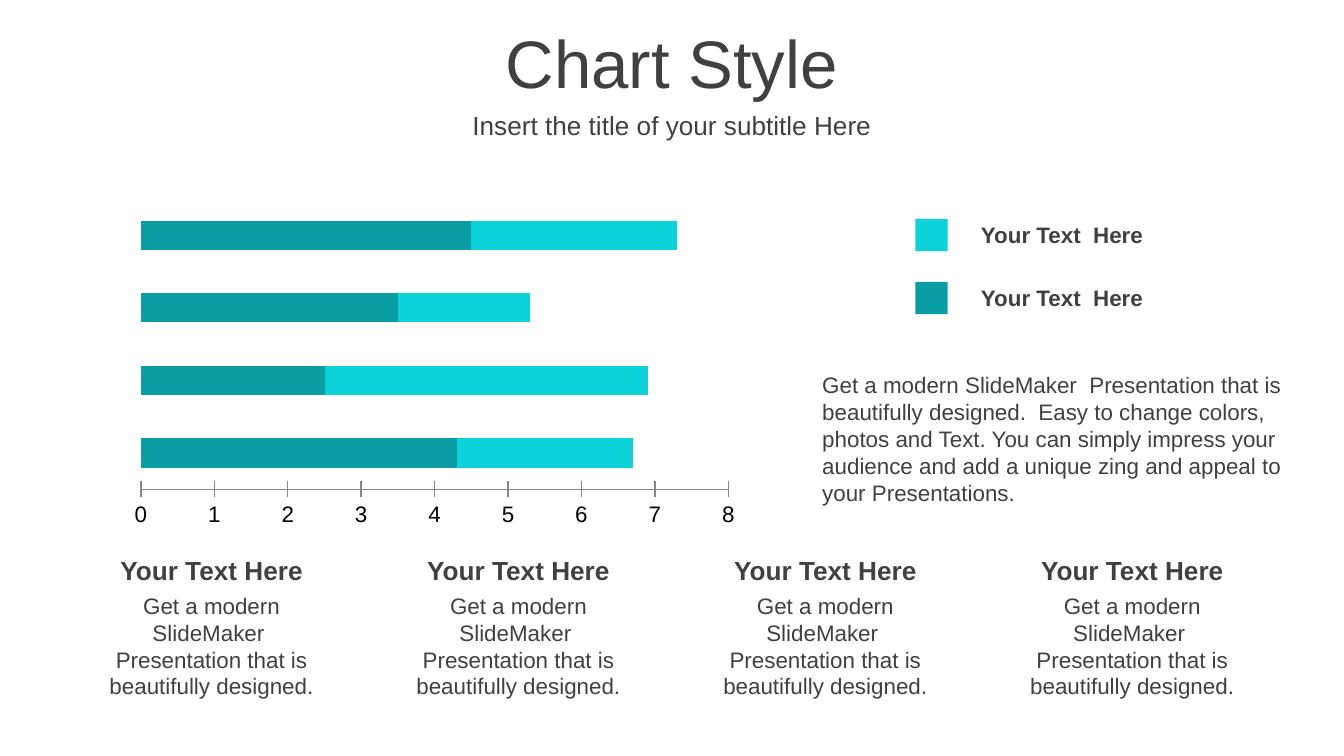
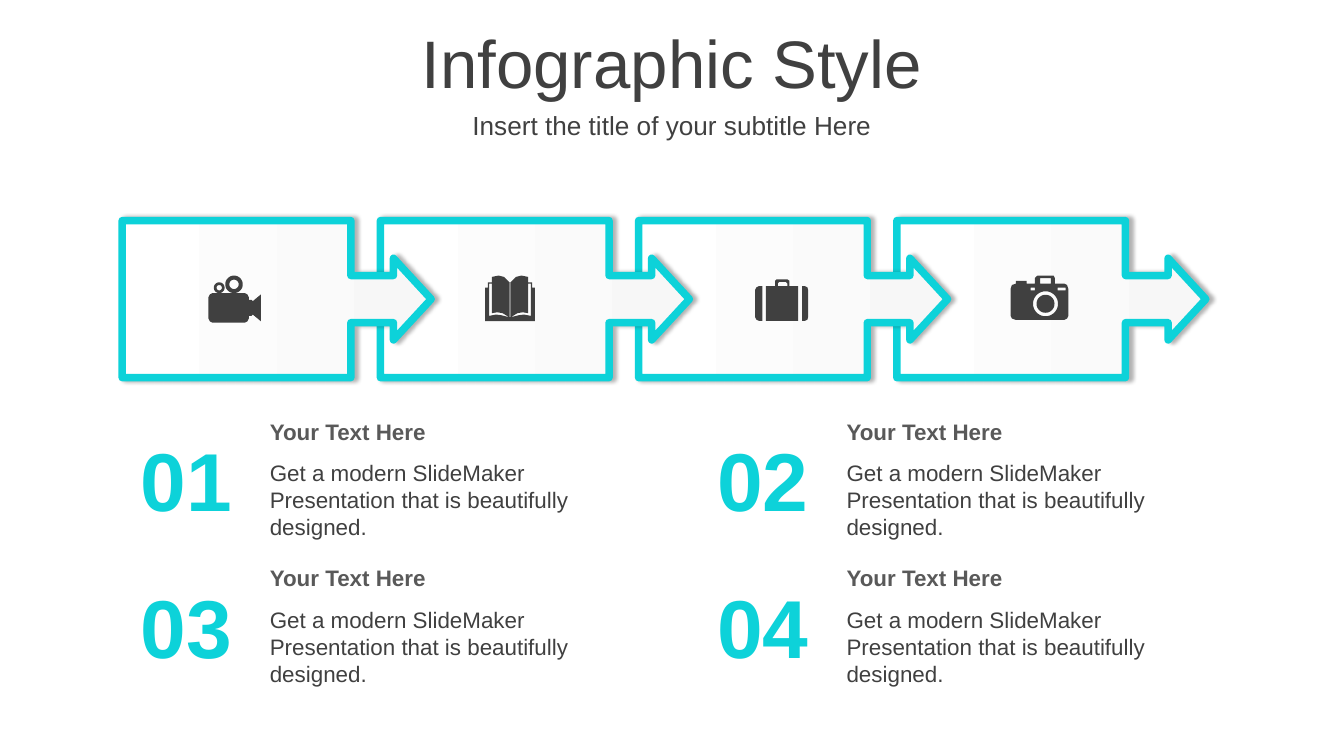
from math import cos, pi, sin

from lxml import etree
from pptx import Presentation
from pptx.chart.data import CategoryChartData
from pptx.dml.color import RGBColor
from pptx.enum.chart import XL_CHART_TYPE, XL_TICK_MARK
from pptx.enum.shapes import MSO_SHAPE
from pptx.enum.text import MSO_ANCHOR, MSO_AUTO_SIZE, PP_ALIGN
from pptx.oxml.ns import qn
from pptx.util import Cm, Pt

LEFT, CENTER = PP_ALIGN.LEFT, PP_ALIGN.CENTER
TOP, MIDDLE = MSO_ANCHOR.TOP, MSO_ANCHOR.MIDDLE
FIT_TEXT = MSO_AUTO_SIZE.SHAPE_TO_FIT_TEXT
RECTANGLE, CALLOUT = MSO_SHAPE.RECTANGLE, MSO_SHAPE.RIGHT_ARROW_CALLOUT
STACKED_BAR = XL_CHART_TYPE.BAR_STACKED
CROSS = XL_TICK_MARK.CROSS

FONT = "Arial"
COLORS = {
    "text": "404040",
    "heading": "595959",
    "bright": "0DD2D9",
    "dark": "0A9DA3",
    "axis": "868686",
    "black": "000000",
    "white": "FFFFFF",
    "pale": "F7F7F7",
}
RGB = {name: RGBColor.from_string(value) for name, value in COLORS.items()}

HEADING = "Your Text Here"
LEGEND_LABEL = "Your Text  Here"
SHORT_TEXT = "Get a modern SlideMaker  Presentation that is beautifully designed."
LONG_TEXT = (
    "Get a modern SlideMaker  Presentation that is beautifully designed.  "
    "Easy to change colors, photos and Text. You can simply impress your "
    "audience and add a unique zing and appeal to your Presentations."
)

# Icon contours in hundredths of an inch; a circle is (center x, center y, radius)
MOVIE_CAMERA = [
    [(3, 13), (27, 13), (29, 14), (30, 16), (30, 18), (32, 18), (33, 19),
     (39, 14), (39, 34), (33, 29), (32, 30), (30, 30), (30, 32), (29, 34),
     (27, 35), (3, 35), (1, 34), (0, 32), (0, 16), (1, 14)],
    (19, 6.5, 6.5), (19, 6.5, 3.5), (8, 9, 4), (8, 9, 2),
]
BOOK = [
    [(0, 9), (2, 9), (2, 5), (5, 5), (5, 1), (10, 0), (14, 1), (18, 5),
     (19, 5), (23, 1), (27, 0), (32, 1), (32, 5), (35, 5), (35, 9),
     (37, 9), (37, 34), (0, 34)],
    [(3, 6), (5, 6), (5, 28), (9, 27.3), (13, 28), (18, 31), (12, 29.5),
     (8, 29), (3, 30)],
    [(34, 6), (32, 6), (32, 28), (28, 27.3), (24, 28), (19, 31),
     (25, 29.5), (29, 29), (34, 30)],
    [(18.2, 5), (18.8, 5), (18.8, 31), (18.2, 31)],
]
SUITCASE = [
    [(35, 5), (37, 5), (39, 6), (39.5, 8), (39.5, 28), (39, 30), (37, 31),
     (35, 31)],
    [(3, 5), (5.5, 5), (5.5, 31), (3, 31), (1, 30), (0, 28), (0, 8), (1, 6)],
    [(8, 5), (15, 5), (15, 1), (16, 0), (24, 0), (25.5, 1), (25.5, 5),
     (32, 5), (32, 31), (8, 31)],
    [(17, 3), (18, 2), (23, 2), (24, 3), (24, 5), (17, 5)],
]
CAMERA = [
    [(4, 6), (4, 4), (12, 4), (12, 6), (18, 6), (18, 2), (20, 0), (32, 0),
     (33, 2), (33, 6), (40, 6), (42, 7), (43, 10), (43, 30), (42, 32),
     (40, 33), (4, 33), (1, 32), (0, 30), (0, 10), (1, 7)],
    [(15, 9), (18, 9), (18, 11), (15, 11)],
    [(35, 9), (41, 9), (41, 11), (35, 11)],
    [(22, 2), (30, 2), (30, 6), (22, 6)],
    (26, 21, 9.3), (26, 21, 6.7),
]


def add_text(slide, text, left, top, width, height, size, color="text",
             bold=False, align=LEFT, anchor=TOP, fit=True):
    box = slide.shapes.add_textbox(Cm(left), Cm(top), Cm(width), Cm(height))
    frame = box.text_frame
    frame.word_wrap = True
    frame.vertical_anchor = anchor
    if fit:
        frame.auto_size = FIT_TEXT
    paragraph = frame.paragraphs[0]
    paragraph.text = text
    paragraph.alignment = align
    paragraph.font.name = FONT
    paragraph.font.size = Pt(size)
    paragraph.font.bold = bold
    paragraph.font.color.rgb = RGB[color]
    return paragraph


def add_icon(slide, contours, left, top):
    builder = None
    for contour in contours:
        if isinstance(contour, tuple):
            x, y, radius = contour
            angles = [2 * pi * step / 36 for step in range(36)]
            contour = [(x + radius * cos(a), y + radius * sin(a)) for a in angles]
        points = [(100 * x, 100 * y) for x, y in contour]
        if builder is None:
            builder = slide.shapes.build_freeform(*points[0], scale=Cm(2.54) / 10000)
        else:
            builder.move_to(*points[0])
        builder.add_line_segments(points[1:], close=True)
    icon = builder.convert_to_shape(Cm(left), Cm(top))
    icon.shadow.inherit = False
    icon.fill.solid()
    icon.fill.fore_color.rgb = RGB["text"]
    icon.line.fill.background()


presentation = Presentation()
presentation.slide_width = Cm(25.4)
presentation.slide_height = Cm(14.29)

# Slides with their shared title and subtitle
slides = []
for title in ("Chart Style", "Infographic Style"):
    slide = presentation.slides.add_slide(presentation.slide_layouts[6])
    for text, top, height, size in (
        (title, 0.36, 1.6, 36),
        ("Insert the title of your subtitle Here", 1.96, 0.79, 14),
    ):
        paragraph = add_text(slide, text, 0, top, 25.4, height, size,
                             align=CENTER, anchor=MIDDLE, fit=False)
        paragraph.space_before = Pt(size * 0.2)
    slides.append(slide)
chart_slide, infographic_slide = slides

# Stacked bar chart
chart_data = CategoryChartData()
chart_data.categories = ["1", "2", "3", "4"]
chart_data.add_series("Series 1", (4.3, 2.5, 3.5, 4.5))
chart_data.add_series("Series 2", (2.4, 4.4, 1.8, 2.8))
chart = chart_slide.shapes.add_chart(
    STACKED_BAR, Cm(2.31), Cm(3.63), Cm(11.81), Cm(6.45), chart_data).chart
chart.has_title = False
chart.has_legend = False
chart.font.name = FONT
chart.font.size = Pt(18)
chart.font.color.rgb = RGB["black"]
plot = chart.plots[0]
plot.gap_width = 150
plot.overlap = 100
plot.vary_by_categories = False
for series, color in zip(plot.series, ("dark", "bright")):
    series.format.fill.solid()
    series.format.fill.fore_color.rgb = RGB[color]
chart.category_axis.visible = False
value_axis = chart.value_axis
value_axis.has_major_gridlines = False
value_axis.major_tick_mark = CROSS
value_axis.tick_labels.font.name = FONT
value_axis.tick_labels.font.size = Pt(12)
value_axis.format.line.color.rgb = RGB["axis"]

# Legend and description
for row, color in enumerate(("bright", "dark")):
    offset = 1.19 * row
    swatch = chart_slide.shapes.add_shape(
        RECTANGLE, Cm(17.3), Cm(4.14 + offset), Cm(0.61), Cm(0.61))
    swatch.shadow.inherit = False
    swatch.fill.solid()
    swatch.fill.fore_color.rgb = RGB[color]
    swatch.line.fill.background()
    add_text(chart_slide, LEGEND_LABEL, 18.29, 4.06 + offset, 5.16, 0.76, 12,
             bold=True, anchor=MIDDLE)
add_text(chart_slide, LONG_TEXT, 15.29, 6.88, 9.6, 2.82, 12, anchor=MIDDLE)

# Four text columns
for column in range(4):
    left = 1.6 + 5.8 * column
    add_text(chart_slide, HEADING, left, 10.34, 4.8, 0.86, 14,
             bold=True, align=CENTER, anchor=MIDDLE)
    add_text(chart_slide, SHORT_TEXT, left, 11.05, 4.8, 2.31, 12,
             align=CENTER, anchor=MIDDLE)

# Arrow chain, the rightmost at the back
for step in reversed(range(4)):
    arrow = infographic_slide.shapes.add_shape(
        CALLOUT, Cm(2.31 + 4.88 * step), Cm(4.17), Cm(5.84), Cm(2.97))
    for index, value in enumerate((0.3, 0.26, 0.24, 0.74)):
        arrow.adjustments[index] = value
    arrow.fill.gradient()
    arrow.fill.gradient_angle = 180
    for stop, color in zip(arrow.fill.gradient_stops, ("pale", "white")):
        stop.color.rgb = RGB[color]
    arrow.line.color.rgb = RGB["bright"]
    arrow.line.width = Pt(4)
    arrow.shadow.inherit = False
    effects = arrow.element.spPr.find(qn("a:effectLst"))
    shadow = etree.SubElement(effects, qn("a:outerShdw"), blurRad=str(Pt(2)),
                              dist=str(Pt(2)), dir="0", algn="l", rotWithShape="0")
    shadow_color = etree.SubElement(shadow, qn("a:srgbClr"), val=COLORS["black"])
    etree.SubElement(shadow_color, qn("a:alpha"), val="30000")

# Icons in the arrows
for contours, left, top in (
    (MOVIE_CAMERA, 3.94, 5.21),
    (BOOK, 9.17, 5.21),
    (SUITCASE, 14.27, 5.28),
    (CAMERA, 19.1, 5.21),
):
    add_icon(infographic_slide, contours, left, top)

# Numbered texts, two by two
for index in range(4):
    row, column = divmod(index, 2)
    x, y = 10.9 * column, 2.77 * row
    add_text(infographic_slide, f"{index + 1:02}", 2.11 + x, 8 + y, 2.82, 2.13, 44,
             color="bright", bold=True, align=CENTER)
    add_text(infographic_slide, HEADING, 4.85 + x, 7.77 + y, 7.7, 0.76, 12,
             color="heading", bold=True)
    add_text(infographic_slide, SHORT_TEXT, 4.85 + x, 8.56 + y, 7.77, 1.8, 12)

presentation.save("out.pptx")
